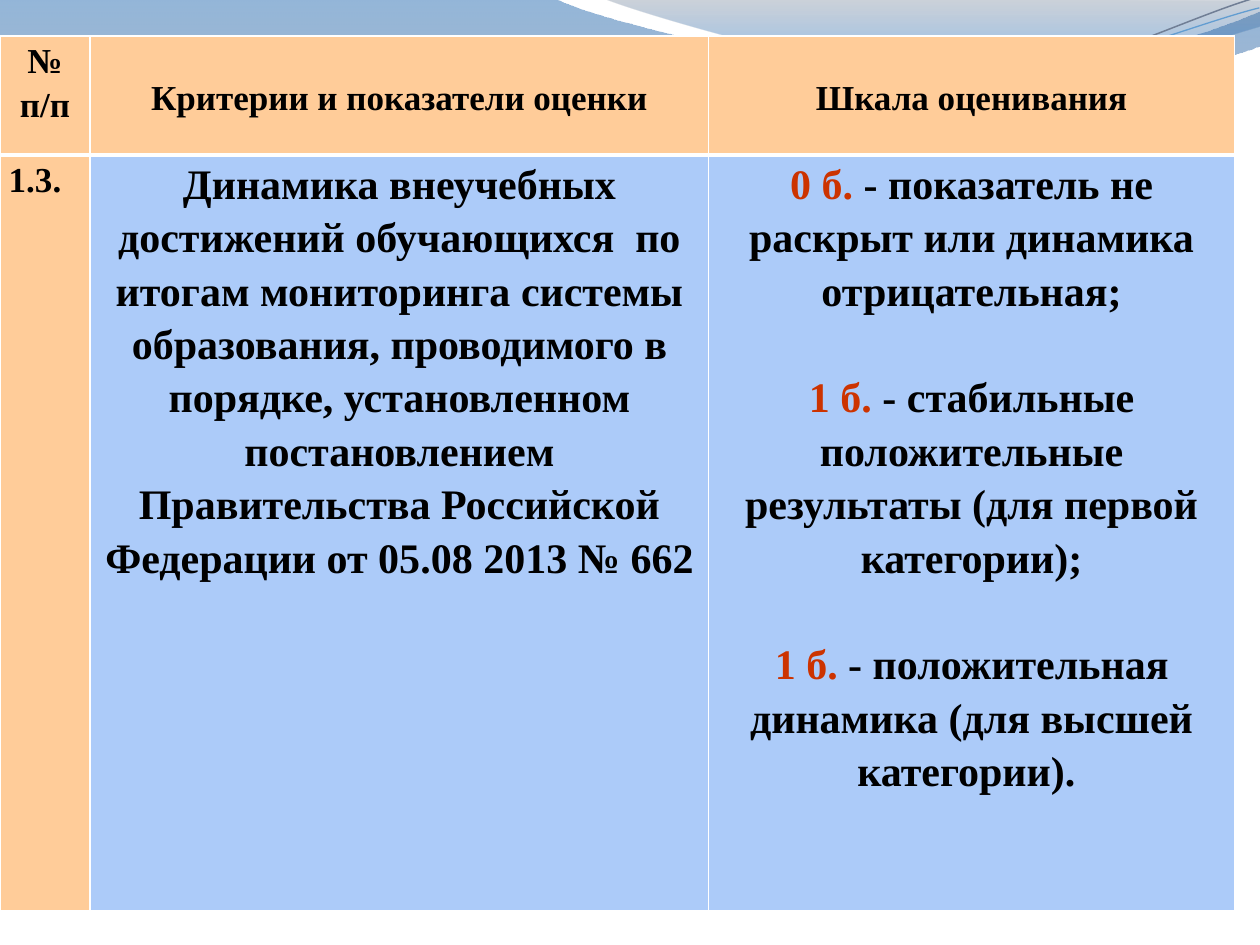
from lxml.etree import SubElement
from pptx import Presentation
from pptx.dml.color import RGBColor as RGB
from pptx.enum.text import MSO_ANCHOR as Anchor, PP_ALIGN as Align
from pptx.oxml.ns import qn
from pptx.util import Pt

FONT = "Times New Roman"
COLORS = {
    "header": "FFCC99", "body": "ACCBF9", "border": "FFFFFF",
    "text": "000000", "score": "CC3300",
    "grey_line": "707E95", "blue_line": "629DD1",
    "band_top": "125EAA", "band_bottom": "697FA4",
    "crest_top": "596982", "crest_bottom": "0670DA",
}

HEADERS = ["№\nп/п", "Критерии и показатели оценки", "Шкала оценивания"]
NUMBER = "1.3."
CRITERION = (
    "Динамика внеучебных достижений обучающихся  по итогам мониторинга системы "
    "образования, проводимого в порядке, установленном постановлением "
    "Правительства Российской Федерации от 05.08 2013 № 662"
)
SCALE = [
    ("0 б.", " - показатель не раскрыт или динамика отрицательная;"),
    ("1 б.", " - стабильные положительные результаты (для первой категории);"),
    ("1 б.", " - положительная динамика (для высшей категории). "),
]

COLUMN_WIDTHS = [51.5, 353.5, 300.5]
ROW_HEIGHTS = [68, 432]
TABLE_LEFT, TABLE_TOP = 0, 20.6
SCORE_GAP = 30.5
LINE_TURN = 357.3

# Waves: a pair is a straight step, six numbers are a Bezier curve
# Gradient stops: position, color, opacity in percent
WAVES = [
    {"start": (0, -1),
     "steps": [(317, -1), (343, 12, 478, 45, 546, 45), (614, 45, 690, 19, 720, 6.5),
               (720.5, 26), (708, 32, 626, 55, 537, 54), (447, 54, 275, 20, 185, 24.5),
               (93, 25, 33, 60, -1, 81)],
     "stops": [(0, "band_top", 45), (1, "band_bottom", 55)]},
    {"start": (345, -1),
     "steps": [(366.5, 8, 491, 44.5, 553.5, 47), (616, 49.5, 692, 23, 720, 15),
               (720, 0)],
     "stops": [(0, "crest_top", 30), (0.8, "crest_bottom", 45)]},
    {"start": (-1.5, 63),
     "steps": [(34, 51.5, 114, 29.5, 200, 30), (285, 30.5, 426, 67, 512.5, 65),
               (599, 62.5, 676.5, 25.5, 720, 15.5)],
     "line": ("grey_line", 0.85)},
    {"start": (-1, 58),
     "steps": [(33, 53.5, 118.5, 32.5, 204, 33), (290.5, 33.5, 429, 63, 515.5, 61.5),
               (601.5, 59.5, 678.5, 30, 721, 21.5)],
     "line": ("blue_line", 0.75)},
]


def rgb(name):
    return RGB.from_string(COLORS[name])


def build_wave(page, start, steps, closed):
    """Build the outline from all knots, then join each curve's three knots."""
    builder = page.shapes.build_freeform(Pt(start[0]), Pt(start[1]))
    knots = [(Pt(step[i]), Pt(step[i + 1]))
             for step in steps for i in range(0, len(step), 2)]
    builder.add_line_segments(knots, close=closed)
    shape = builder.convert_to_shape()
    segments = iter(list(shape.element.iter(qn("a:lnTo"))))
    for step in steps:
        parts = [next(segments) for _ in range(len(step) // 2)]
        if len(parts) == 3:
            outline = parts[0].getparent()
            curve = SubElement(outline, qn("a:cubicBezTo"))
            parts[0].addprevious(curve)
            for part in parts:
                curve.append(part[0])
                outline.remove(part)
    return shape


def add_wave(page, wave):
    shape = build_wave(page, wave["start"], wave["steps"], closed="stops" in wave)
    shape.shadow.inherit = False
    if "line" in wave:
        color, width = wave["line"]
        shape.fill.background()
        shape.line.color.rgb = rgb(color)
        shape.line.width = Pt(width)
        shape.rotation = LINE_TURN
        return
    shape.line.fill.background()
    shape.fill.gradient()
    shape.fill.gradient_angle = 270
    for stop, (position, color, _) in zip(shape.fill.gradient_stops, wave["stops"]):
        stop.position = position
        stop.color.rgb = rgb(color)
    for tag, (_, _, opacity) in zip(shape.element.iter(qn("a:srgbClr")), wave["stops"]):
        SubElement(tag, qn("a:alpha"), val=str(opacity * 1000))


def add_borders(cell, top, bottom):
    props = cell._tc.get_or_add_tcPr()
    for side, width in (("L", 1), ("R", 1), ("T", top), ("B", bottom)):
        line = SubElement(props, qn(f"a:ln{side}"), w=str(Pt(width)))
        fill = SubElement(line, qn("a:solidFill"))
        SubElement(fill, qn("a:srgbClr"), val=COLORS["border"])


def fill_cell(cell, paragraphs, size, fill, align=Align.CENTER, gap=0):
    """Fill a cell with paragraphs, each a list of (text, color) spans."""
    cell.margin_left = cell.margin_right = Pt(5)
    cell.margin_top = cell.margin_bottom = 0
    cell.fill.solid()
    cell.fill.fore_color.rgb = rgb(fill)
    frame = cell.text_frame
    for i, spans in enumerate(paragraphs):
        para = frame.add_paragraph() if i else frame.paragraphs[0]
        para.alignment = align
        para.line_spacing = 1.15
        if i and gap:
            para.space_before = Pt(gap)
        for text, color in spans:
            span = para.add_run()
            span.text = text
            span.font.name = FONT
            span.font.size = Pt(size)
            span.font.bold = True
            span.font.color.rgb = rgb(color)


deck = Presentation()
deck.slide_width, deck.slide_height = Pt(720), Pt(540)
page = deck.slides.add_slide(deck.slide_layouts[6])

# Background waves
for wave in WAVES:
    add_wave(page, wave)

# Table grid
table = page.shapes.add_table(
    len(ROW_HEIGHTS), len(COLUMN_WIDTHS), Pt(TABLE_LEFT), Pt(TABLE_TOP),
    Pt(sum(COLUMN_WIDTHS)), Pt(sum(ROW_HEIGHTS))).table
table.first_row = table.horz_banding = False
for column, width in zip(table.columns, COLUMN_WIDTHS):
    column.width = Pt(width)
for row, height in zip(table.rows, ROW_HEIGHTS):
    row.height = Pt(height)
for c in range(len(COLUMN_WIDTHS)):
    add_borders(table.cell(0, c), top=1, bottom=3)
    add_borders(table.cell(1, c), top=3, bottom=1)

# Header row
for c, header in enumerate(HEADERS):
    cell = table.cell(0, c)
    fill_cell(cell, [[(line, "text")] for line in header.split("\n")], 20, "header")
    if c:
        cell.vertical_anchor = Anchor.MIDDLE

# Criterion row
fill_cell(table.cell(1, 0), [[(NUMBER, "text")]], 20, "header", Align.LEFT)
fill_cell(table.cell(1, 1), [[(CRITERION, "text")]], 24, "body")
scale = [[(score, "score"), (meaning, "text")] for score, meaning in SCALE]
fill_cell(table.cell(1, 2), scale, 24, "body", gap=SCORE_GAP)

deck.save("out.pptx")
